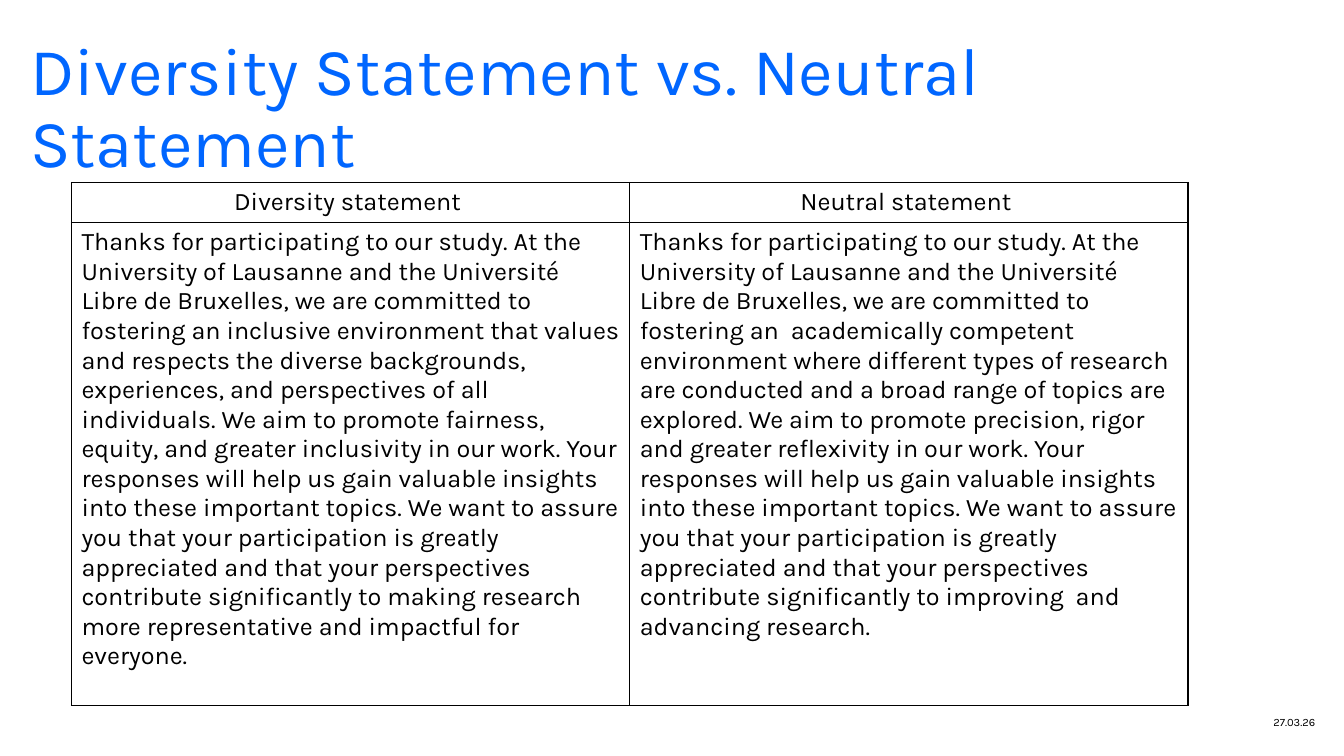
from dataclasses import dataclass

from lxml import etree
from pptx import Presentation
from pptx import util as u
from pptx.dml.color import RGBColor
from pptx.enum import text
from pptx.oxml import ns


@dataclass(frozen=True)
class Theme:
    font: str = "Karla"
    blue: str = "0066FF"
    black: str = "000000"
    title_size: int = 48
    body_size: int = 18
    date_size: int = 8


THEME = Theme()
LEFT, CENTER, RIGHT = text.PP_ALIGN.LEFT, text.PP_ALIGN.CENTER, text.PP_ALIGN.RIGHT

OPENING = (
    "Thanks for participating to our study. At the University of Lausanne and the "
    "Université Libre de Bruxelles, we are committed to fostering an "
)
CLOSING = (
    " in our work. Your responses will help us gain valuable insights into these "
    "important topics. We want to assure you that your participation is greatly "
    "appreciated and that your perspectives contribute significantly to "
)
DIVERSITY = (
    "inclusive environment that values and respects the diverse backgrounds, "
    "experiences, and perspectives of all individuals. We aim to promote fairness, "
    "equity, and greater inclusivity",
    "making research more representative and impactful for everyone.",
)
NEUTRAL = (
    " academically competent environment where different types of research are "
    "conducted and a broad range of topics are explored. We aim to promote precision, "
    "rigor and greater reflexivity",
    "improving  and advancing research.",
)


def statement(aim, outcome):
    return OPENING + aim + CLOSING + outcome


def write(tf, content, size=THEME.body_size, color=THEME.black, align=LEFT, spacing=None):
    p = tf.paragraphs[0]
    p.alignment = align
    p.line_spacing = spacing
    r = p.add_run()
    r.text = content
    r.font.name = THEME.font
    r.font.size = u.Pt(size)
    r.font.color.rgb = RGBColor.from_string(color)


def place(sp, left, top, width, height):
    sp.left, sp.top, sp.width, sp.height = map(u.Cm, (left, top, width, height))


def fit_frame(tf):
    tf.word_wrap = True
    tf.auto_size = text.MSO_AUTO_SIZE.NONE
    tf.vertical_anchor = text.MSO_ANCHOR.BOTTOM
    tf.margin_left = tf.margin_top = tf.margin_right = tf.margin_bottom = 0


def add_title(s, content):
    sp = s.shapes.title
    place(sp, 0.76, 0.86, 32.36, 3.73)
    fit_frame(sp.text_frame)
    write(sp.text_frame, content, THEME.title_size, THEME.blue, spacing=0.9)


def add_date(s, content):
    sp = s.shapes.add_textbox(u.Cm(30.3), u.Cm(17.37), u.Cm(2.85), u.Cm(1))
    fit_frame(sp.text_frame)
    write(sp.text_frame, content, THEME.date_size, align=RIGHT)


def set_borders(cell):
    tc_pr = cell._tc.get_or_add_tcPr()
    for side in ("a:lnL", "a:lnR", "a:lnT", "a:lnB"):
        ln = etree.SubElement(tc_pr, ns.qn(side), w=str(u.Pt(1)))
        fill = etree.SubElement(ln, ns.qn("a:solidFill"))
        etree.SubElement(fill, ns.qn("a:srgbClr"), val=THEME.black)


def add_table(s, rows, heights, col_width):
    frame = s.shapes.add_table(
        len(rows), len(rows[0]), u.Cm(1.8), u.Cm(4.6),
        u.Cm(col_width * len(rows[0])), u.Cm(sum(heights)),
    )
    table = frame.table
    table.first_row = table.horz_banding = False
    for col in table.columns:
        col.width = u.Cm(col_width)
    for i, (row, height) in enumerate(zip(rows, heights)):
        table.rows[i].height = u.Cm(height)
        for j, content in enumerate(row):
            cell = table.cell(i, j)
            set_borders(cell)
            cell.fill.background()
            write(cell.text_frame, content, align=LEFT if i else CENTER)


def main():
    prs = Presentation()
    prs.slide_width, prs.slide_height = u.Cm(33.87), u.Cm(19.05)
    s = prs.slides.add_slide(prs.slide_layouts[5])
    add_date(s, "27.03.26")
    add_title(s, "Diversity Statement vs. Neutral Statement")
    rows = [
        ("Diversity statement ", "Neutral statement "),
        (statement(*DIVERSITY), statement(*NEUTRAL)),
    ]
    add_table(s, rows, heights=(1.01, 12.17), col_width=14.07)
    prs.save("out.pptx")


if __name__ == "__main__":
    main()
